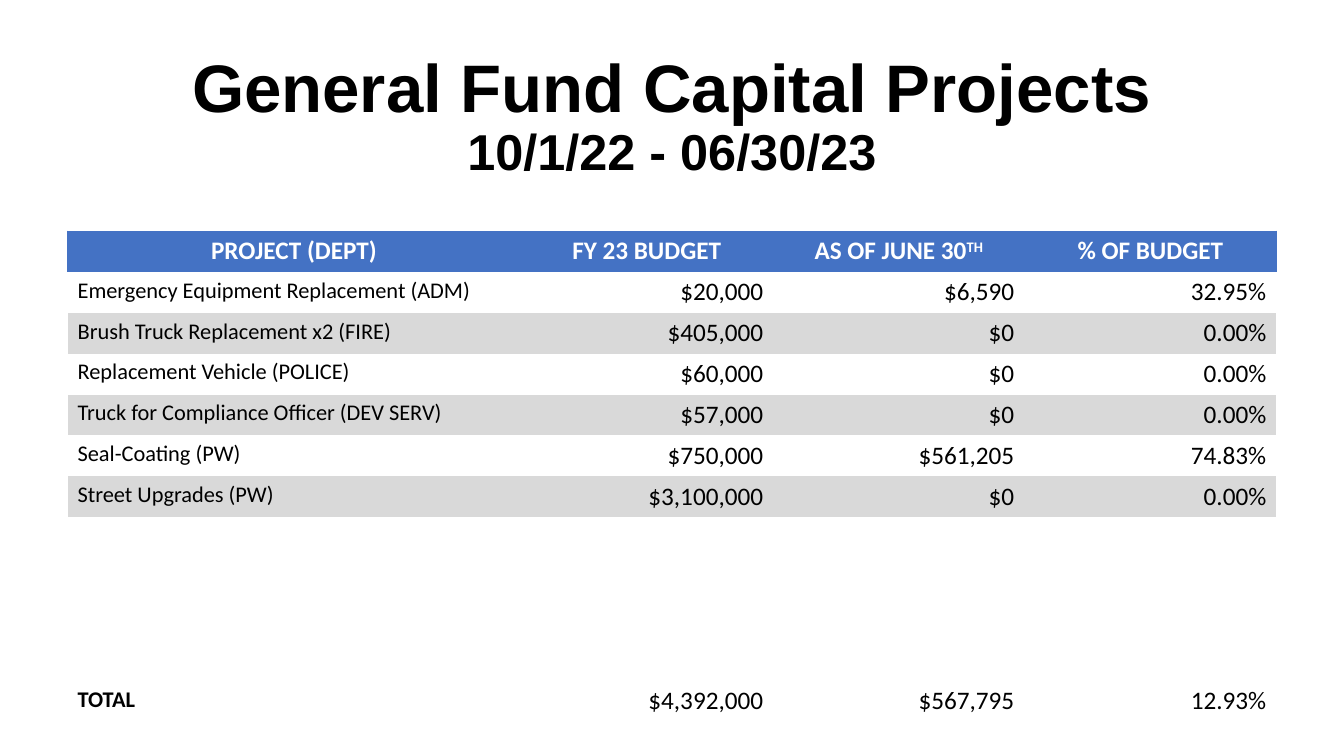
import pptx
import pptx.util
import pptx.dml.color
import pptx.enum.text
import pptx.oxml
import pptx.oxml.ns

PX = 9144  # 100 px to the inch
COLORS = {"ink": "000000", "header": "4472C4", "header_text": "FFFFFF", "band": "D9D9D9"}
ALIGN = pptx.enum.text.PP_ALIGN
ANCHOR = pptx.enum.text.MSO_ANCHOR
PLAIN_TABLE = "{2D5ABB26-0587-4C30-8999-92F81FD0307C}"

COLUMN_WIDTHS = [449, 251, 249, 250]
ROW_HEIGHT = 40.6
HEADINGS = [["PROJECT (DEPT)"], ["FY 23 BUDGET"], ["AS OF JUNE 30", "TH"], ["% OF BUDGET"]]
PROJECTS = [
    ["Emergency Equipment Replacement (ADM)", "$20,000", "$6,590", "32.95%"],
    ["Brush Truck Replacement x2 (FIRE)", "$405,000", "$0", "0.00%"],
    ["Replacement Vehicle (POLICE)", "$60,000", "$0", "0.00%"],
    ["Truck for Compliance Officer (DEV SERV)", "$57,000", "$0", "0.00%"],
    ["Seal-Coating (PW)", "$750,000", "$561,205", "74.83%"],
    ["Street Upgrades (PW)", "$3,100,000", "$0", "0.00%"],
]
BLANK_ROWS = 4
TOTAL = ["TOTAL", "$4,392,000", "$567,795", "12.93%"]


def px(length):
    return pptx.util.Emu(round(length * PX))


def rgb(name):
    return pptx.dml.color.RGBColor.from_string(COLORS[name])


class BudgetSlide:
    def __init__(self, deck):
        self.slide = deck.slides.add_slide(deck.slide_layouts[5])

    def add_text(self, paragraph, text, color="ink", **font_format):
        run = paragraph.add_run()
        run.text = text
        for attribute, value in font_format.items():
            setattr(run.font, attribute, value)
        run.font.color.rgb = rgb(color)
        return run

    def title(self, box, lines):
        heading = self.slide.shapes.title
        for side, length in zip(("left", "top", "width", "height"), box):
            setattr(heading, side, px(length))
        frame = heading.text_frame
        frame_format = {"word_wrap": True, "vertical_anchor": ANCHOR.MIDDLE,
                        "auto_size": pptx.enum.text.MSO_AUTO_SIZE.NONE}
        for attribute, value in frame_format.items():
            setattr(frame, attribute, value)
        paragraph = frame.paragraphs[0]
        paragraph.alignment, paragraph.line_spacing = ALIGN.CENTER, 0.9
        for number, (text, size) in enumerate(lines):
            if number:
                paragraph.add_line_break()
            self.add_text(paragraph, text, name="Arial", size=pptx.util.Pt(size), bold=True)

    def table(self, left, top, widths, row_count):
        frame = self.slide.shapes.add_table(row_count, len(widths), px(left), px(top),
                                            px(sum(widths)), px(ROW_HEIGHT * row_count))
        grid = frame.table
        grid.horz_banding = False
        for style in grid._tbl.tblPr.iter(pptx.oxml.ns.qn("a:tableStyleId")):
            style.text = PLAIN_TABLE
        for column, width in zip(grid.columns, widths):
            column.width = px(width)
        for row in grid.rows:
            row.height = px(ROW_HEIGHT)
        return grid

    def cell(self, cell, parts, align, size, bold=False, color="ink", fill=None):
        if fill:
            cell.fill.solid()
            cell.fill.fore_color.rgb = rgb(fill)
        paragraph = cell.text_frame.paragraphs[0]
        paragraph.alignment = align
        for number, text in enumerate(parts):
            run = self.add_text(paragraph, text, color, name="Calibri",
                                size=pptx.util.Pt(size), bold=bold)
            if number:  # ordinal suffix is raised
                run.font._element.set("baseline", "30000")

    def border(self, cell, sides):
        properties = cell._tc.get_or_add_tcPr()
        for position, side in enumerate(sides):
            properties.insert(position, pptx.oxml.parse_xml(
                f'<a:ln{side} {pptx.oxml.ns.nsdecls("a")} w="6350"><a:solidFill>'
                f'<a:srgbClr val="{COLORS["header"]}"/></a:solidFill></a:ln{side}>'))


def main():
    deck = pptx.Presentation()
    deck.slide_width, deck.slide_height = px(1333), px(750)
    page = BudgetSlide(deck)

    # Title with reporting period
    page.title((67, 26, 1199, 182),
               [("General Fund Capital Projects", 48), ("10/1/22 - 06/30/23", 36)])

    # Header row
    last_row = len(PROJECTS) + BLANK_ROWS + 1
    budget = page.table(67, 229, COLUMN_WIDTHS, last_row + 1)
    for column, heading in enumerate(HEADINGS):
        cell = budget.cell(0, column)
        page.cell(cell, heading, ALIGN.CENTER, 18, True, "header_text", "header")
        page.border(cell, {0: "LT", len(HEADINGS) - 1: "RT"}.get(column, "T"))

    # Project rows, then the total at the foot
    for row, values in [*enumerate(PROJECTS, 1), (last_row, TOTAL)]:
        band = "band" if row % 2 == 0 else None
        for column, value in enumerate(values):
            is_name = column == 0
            page.cell(budget.cell(row, column), [value],
                      ALIGN.LEFT if is_name else ALIGN.RIGHT, 16 if is_name else 18,
                      is_name and row == last_row, fill=band)

    deck.save("out.pptx")


if __name__ == "__main__":
    main()
